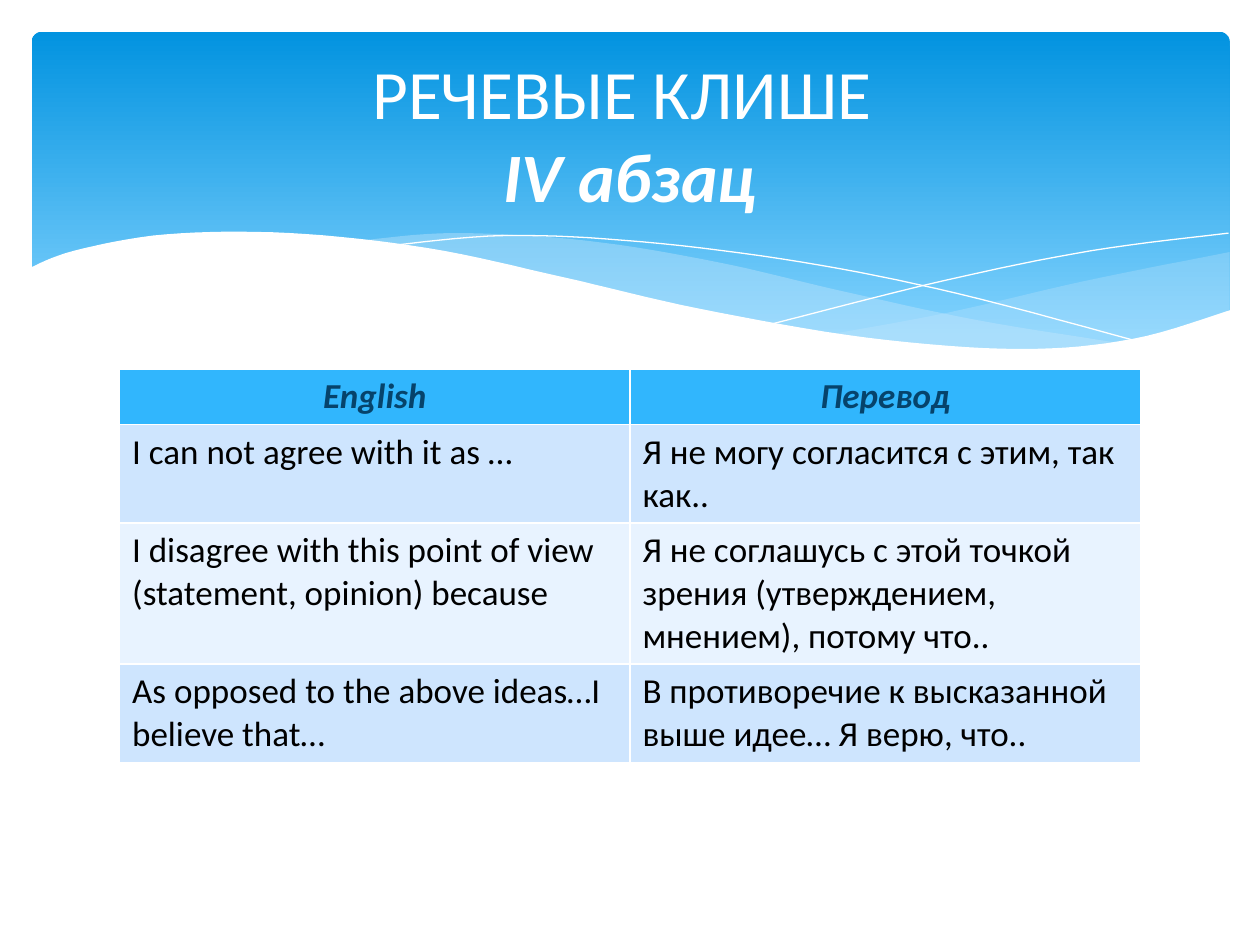
from lxml.etree import SubElement
from pptx import Presentation
from pptx.dml.color import RGBColor
from pptx.enum.shapes import MSO_SHAPE as Kind
from pptx.enum.text import MSO_ANCHOR as Anchor, MSO_AUTO_SIZE as Fit, PP_ALIGN as Align
from pptx.oxml.ns import qn
from pptx.util import Cm, Pt

TITLE = [("РЕЧЕВЫЕ КЛИШЕ ", {}), ("IV абзац", {"bold": True, "italic": True})]
ROWS = [
    ("English", "Перевод"),
    ("I can not agree with it as …", "Я не могу согласится с этим, так как.."),
    ("I disagree with this point of view (statement, opinion) because",
     "Я не соглашусь с этой точкой зрения (утверждением, мнением), потому что.."),
    ("As opposed to the above ideas…I believe that…",
     "В противоречие к высказанной выше идее… Я верю, что.."),
]
HIGHS = [1.08, 1.98, 2.84, 1.98]
WIDE = 10.29
HEAD, BANDS = "31B6FD", ("E8F3FF", "CEE5FE")
WHITE, PALE = "FFFFFF", "C6E7FC"
UNIT = Cm(2.54) / 100
STEPS = 8

WAVES = [
    {"fill": PALE, "alpha": 29, "base": 278,
     "knots": [(976, 200), (861, 223), (753, 248), (661, 265)]},
    {"fill": PALE, "alpha": 40, "base": 278,
     "knots": [(286, 191), (361, 185), (465, 191), (569, 208), (668, 231),
               (775, 254), (893, 273)]},
    {"knots": [(309, 195), (401, 187), (510, 192), (636, 208), (760, 233), (907, 272)]},
    {"knots": [(613, 257), (748, 223), (866, 199), (975, 185)]},
    {"fill": WHITE, "base": 329,
     "knots": [(977, 246), (899, 269), (809, 277), (688, 268), (555, 245), (447, 220),
               (340, 197), (230, 185), (132, 186), (59, 199), (23, 213)]},
]


def color(code):
    return RGBColor.from_string(code)


def paint(fill, code):
    fill.solid()
    fill.fore_color.rgb = color(code)


def assign(thing, values):
    for name, value in values.items():
        setattr(thing, name, value)


def style(font, code, **looks):
    assign(font, {"name": "Calibri", **looks})
    font.color.rgb = color(code)


def blend(a, b, c, d, t):
    return b + t * (c - a + t * (2 * a - 5 * b + 4 * c - d + t * (3 * (b - c) + d - a))) / 2


def smooth(knots):
    ends = [knots[0], *knots, knots[-1]]
    curve = [tuple(blend(*axis, step / STEPS) for axis in zip(*four))
             for four in zip(ends, ends[1:], ends[2:], ends[3:])
             for step in range(STEPS)]
    return [*curve, knots[-1]]


def add_banner(shapes):
    box = shapes.add_shape(Kind.ROUNDED_RECTANGLE, Cm(0.64), Cm(0.64), Cm(24.15), Cm(6.86))
    box.shadow.inherit = False
    box.adjustments[0] = 0.03
    box.line.fill.background()
    box.fill.gradient()
    box.fill.gradient_angle = 270
    for stop, (place, code) in zip(box.fill.gradient_stops, [(0, "0293E0"), (0.9, "83D3FE")]):
        stop.position = place
        stop.color.rgb = color(code)


def add_wave(shapes, wave):
    solid = "fill" in wave
    points = smooth(wave["knots"])
    if solid:
        points += [(points[end][0], wave["base"]) for end in (-1, 0)]
    spots = [(round(x * 10), round(y * 10)) for x, y in points]
    pen = shapes.build_freeform(*spots[0], scale=UNIT / 10)
    pen.add_line_segments(spots[1:], close=solid)
    shape = pen.convert_to_shape()
    shape.shadow.inherit = False
    if not solid:
        shape.fill.background()
        paint(shape.line.fill, WHITE)
        shape.line.width = Pt(0)
        return
    shape.line.fill.background()
    paint(shape.fill, wave["fill"])
    if "alpha" in wave:
        tint = shape.element.spPr.find(".//" + qn("a:srgbClr"))
        SubElement(tint, qn("a:alpha")).set("val", str(wave["alpha"] * 1000))


def add_grid(shapes):
    frame = shapes.add_table(len(ROWS), 2, Cm(2.41), Cm(7.44), Cm(2 * WIDE), Cm(sum(HIGHS)))
    grid = frame.table
    for col in grid.columns:
        col.width = Cm(WIDE)
    for i, (texts, high) in enumerate(zip(ROWS, HIGHS)):
        top = i == 0
        grid.rows[i].height = Cm(high)
        for cell, text in zip(grid.rows[i].cells, texts):
            cell.text = text
            paint(cell.fill, HEAD if top else BANDS[i % 2])
            para = cell.text_frame.paragraphs[0]
            para.alignment = Align.CENTER if top else Align.LEFT
            style(para.runs[0].font, "06436B" if top else "000000",
                  size=Pt(20), bold=top, italic=top)


def set_title(slide):
    title = slide.shapes.title
    assign(title, {"left": Cm(1.27), "top": Cm(0.94), "width": Cm(22.86), "height": Cm(3.48)})
    frame = title.text_frame
    assign(frame, {"word_wrap": True, "auto_size": Fit.NONE, "vertical_anchor": Anchor.MIDDLE})
    para = frame.paragraphs[0]
    para.alignment = Align.CENTER
    for i, (text, looks) in enumerate(TITLE):
        if i:
            para.add_line_break()
        run = para.add_run()
        run.text = text
        style(run.font, WHITE, size=Pt(39.6), **looks)
    slide.shapes.element.append(title.element)


def main():
    deck = Presentation()
    assign(deck, {"slide_width": Cm(25.4), "slide_height": Cm(19.05)})
    slide = deck.slides.add_slide(deck.slide_layouts[5])
    add_banner(slide.shapes)
    for wave in WAVES:
        add_wave(slide.shapes, wave)
    add_grid(slide.shapes)
    set_title(slide)
    deck.save("out.pptx")


if __name__ == "__main__":
    main()
